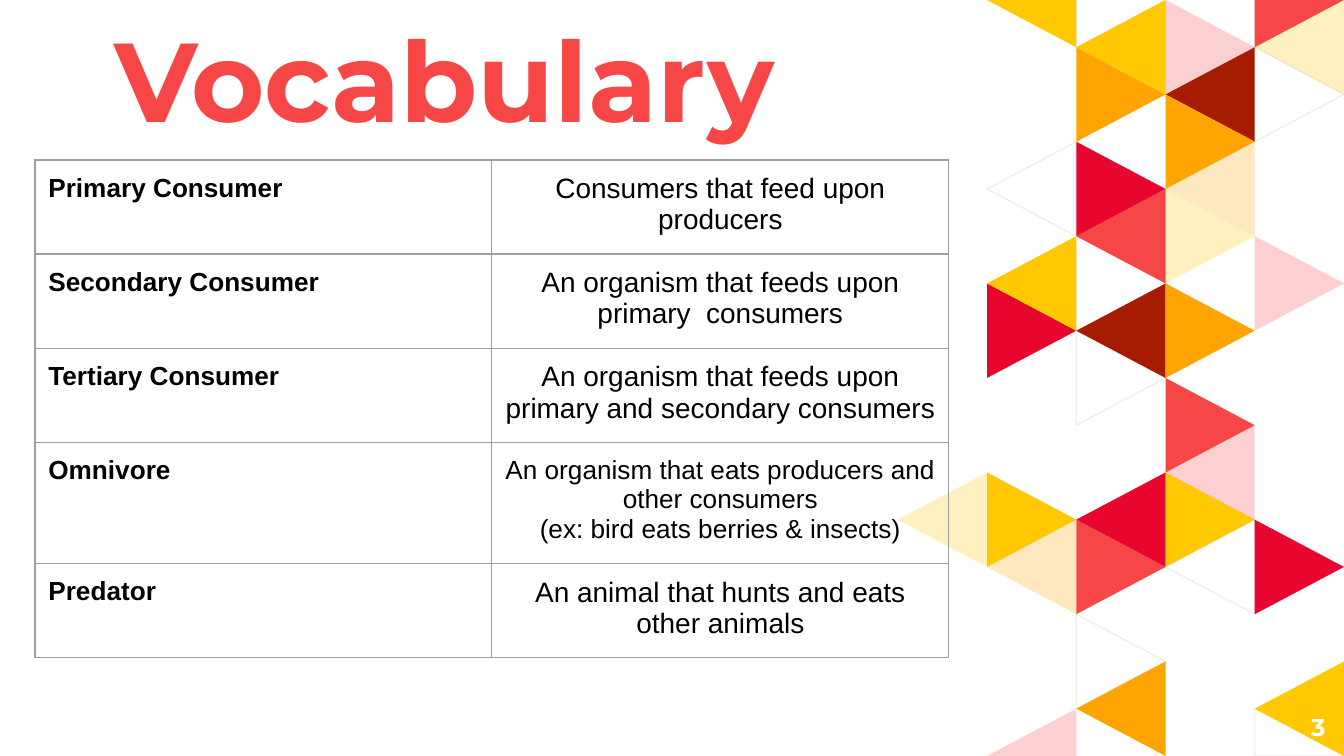
from dataclasses import dataclass

from lxml.etree import SubElement
from pptx import Presentation
from pptx.dml.color import RGBColor
from pptx.enum.text import MSO_ANCHOR, PP_ALIGN
from pptx.oxml.ns import qn
from pptx.util import Inches, Pt


@dataclass(frozen=True)
class Theme:
    heading_font: str = "Montserrat"
    body_font: str = "Arial"
    title_size: int = 60
    number_size: int = 13
    term_size: int = 14
    definition_size: int = 15
    coral: str = "F64646"
    red: str = "E8062F"
    brown: str = "A61C00"
    orange: str = "FFA400"
    yellow: str = "FFC800"
    white: str = "FFFFFF"
    black: str = "000000"
    outline: str = "EFEFEF"
    border: str = "9E9E9E"
    line_width: float = 0.75
    tint: int = 25  # opacity of the pale triangles, in percent


THEME = Theme()

# Slide and triangle grid: 16 half-height rows, five columns at the right edge
SLIDE_WIDTH = Inches(10)
SLIDE_HEIGHT = SLIDE_WIDTH * 9 // 16
GRID_ROWS = 16
GRID_COLUMNS = 5
ROW_STEP = SLIDE_HEIGHT / GRID_ROWS
COLUMN_STEP = SLIDE_WIDTH * 0.0664
GRID_LEFT = SLIDE_WIDTH - GRID_COLUMNS * COLUMN_STEP

# Triangles by look: (column, top row, side the tip points to)
SOLID_TRIANGLES = {
    THEME.coral: [(2, 11, "right"), (4, -1, "right"), (2, 4, "left"), (3, 8, "right")],
    THEME.red: [(4, 11, "right"), (2, 10, "left"), (2, 3, "right"), (1, 6, "right")],
    THEME.brown: [(3, 1, "left"), (2, 6, "left")],
    THEME.orange: [(3, 2, "right"), (2, 14, "left"), (2, 1, "right"), (3, 6, "right")],
    THEME.yellow: [(3, 10, "right"), (1, -1, "left"), (4, 14, "left"),
                   (2, 0, "left"), (1, 10, "right"), (1, 5, "left")],
}
PALE_TRIANGLES = {
    THEME.coral: [(3, 0, "right"), (3, 9, "left"), (1, 15, "left"), (4, 5, "right")],
    THEME.orange: [(1, 11, "left"), (3, 3, "left")],
    THEME.yellow: [(3, 4, "right"), (4, 0, "left"), (0, 10, "left")],
}
OUTLINED_TRIANGLES = [(2, 13, "right"), (4, 1, "right"), (3, 11, "left"),
                      (1, 3, "left"), (4, 15, "right"), (2, 7, "right")]

# Term, definition, definition size
VOCABULARY = [
    ("Primary Consumer", "Consumers that feed upon producers", THEME.definition_size),
    ("Secondary Consumer", "An organism that feeds upon primary  consumers",
     THEME.definition_size),
    ("Tertiary Consumer", "An organism that feeds upon primary and secondary consumers",
     THEME.definition_size),
    ("Omnivore", "An organism that eats producers and other consumers"
     "\v(ex: bird eats berries & insects)", THEME.term_size),
    ("Predator", "An animal that hunts and eats other animals", THEME.definition_size),
]


def rgb(colour):
    return RGBColor.from_string(colour)


def write_text(text_frame, text, font, size, colour, bold=True, align=PP_ALIGN.LEFT):
    paragraph = text_frame.paragraphs[0]
    paragraph.text = text
    paragraph.alignment = align
    for run in paragraph.runs:
        run.font.name = font
        run.font.size = Pt(size)
        run.font.bold = bold
        run.font.color.rgb = rgb(colour)
    return paragraph


def set_margins(target):
    target.margin_left = target.margin_right = Inches(0.1)
    target.margin_top = target.margin_bottom = Inches(0.1)


def add_text(slide, box, anchor, text, **style):
    text_frame = slide.shapes.add_textbox(*map(Inches, box)).text_frame
    text_frame.word_wrap = True
    text_frame.vertical_anchor = anchor
    set_margins(text_frame)
    return write_text(text_frame, text, THEME.heading_font, **style)


def add_triangle(slide, column, row, tip, colour, opacity=100, outline=None):
    base, point = (column, column + 1) if tip == "right" else (column + 1, column)
    corners = [(base, row), (base, row + 2), (point, row + 1)]
    # Corners beyond the slide are pulled back to its edge
    points = [(round(GRID_LEFT + x * COLUMN_STEP),
               round(min(max(y, 0), GRID_ROWS) * ROW_STEP)) for x, y in corners]
    builder = slide.shapes.build_freeform(*points[0])
    builder.add_line_segments(points[1:], close=True)
    shape = builder.convert_to_shape()
    shape.shadow.inherit = False
    shape.fill.solid()
    shape.fill.fore_color.rgb = rgb(colour)
    if opacity < 100:
        fill_colour = shape.fill._xPr.find(qn("a:solidFill"))[0]
        SubElement(fill_colour, qn("a:alpha"), val=str(opacity * 1000))
    if outline:
        shape.line.color.rgb = rgb(outline)
        shape.line.width = Pt(THEME.line_width)
    else:
        shape.line.fill.background()


def add_pattern(slide):
    for triangle in OUTLINED_TRIANGLES:
        add_triangle(slide, *triangle, THEME.white, outline=THEME.outline)
    for group, opacity in ((SOLID_TRIANGLES, 100), (PALE_TRIANGLES, THEME.tint)):
        for colour, triangles in group.items():
            for triangle in triangles:
                add_triangle(slide, *triangle, colour, opacity)


def format_cell(cell):
    set_margins(cell)
    properties = cell._tc.get_or_add_tcPr()
    for side in ("lnL", "lnR", "lnT", "lnB"):
        line = SubElement(properties, qn(f"a:{side}"), w=str(Pt(THEME.line_width)))
        SubElement(SubElement(line, qn("a:solidFill")), qn("a:srgbClr"), val=THEME.border)
    cell.fill.background()


def add_vocabulary_table(slide):
    column_width, row_height = Inches(3.4), Inches(0.42)
    table = slide.shapes.add_table(
        len(VOCABULARY), 2, Inches(0.26), Inches(1.19),
        2 * column_width, len(VOCABULARY) * row_height).table
    table.first_row = table.horz_banding = False
    for row, (term, definition, size) in enumerate(VOCABULARY):
        term_cell, definition_cell = table.cell(row, 0), table.cell(row, 1)
        for cell in (term_cell, definition_cell):
            format_cell(cell)
        write_text(term_cell.text_frame, term, THEME.body_font,
                   THEME.term_size, THEME.black)
        write_text(definition_cell.text_frame, definition, THEME.body_font,
                   size, THEME.black, bold=False, align=PP_ALIGN.CENTER)


def main():
    presentation = Presentation()
    presentation.slide_width = SLIDE_WIDTH
    presentation.slide_height = SLIDE_HEIGHT
    slide = presentation.slides.add_slide(presentation.slide_layouts[6])

    # Triangle pattern behind everything
    add_pattern(slide)

    # Title and slide number
    title = add_text(slide, (0.75, 0.15, 5.42, 1.04), MSO_ANCHOR.BOTTOM, "Vocabulary",
                     size=THEME.title_size, colour=THEME.coral)
    title.line_spacing = 0.9
    add_text(slide, (9.36, 5.19, 0.6, 0.43), MSO_ANCHOR.MIDDLE, "3",
             size=THEME.number_size, colour=THEME.white, align=PP_ALIGN.RIGHT)

    # Terms and definitions
    add_vocabulary_table(slide)

    presentation.save("out.pptx")


if __name__ == "__main__":
    main()
